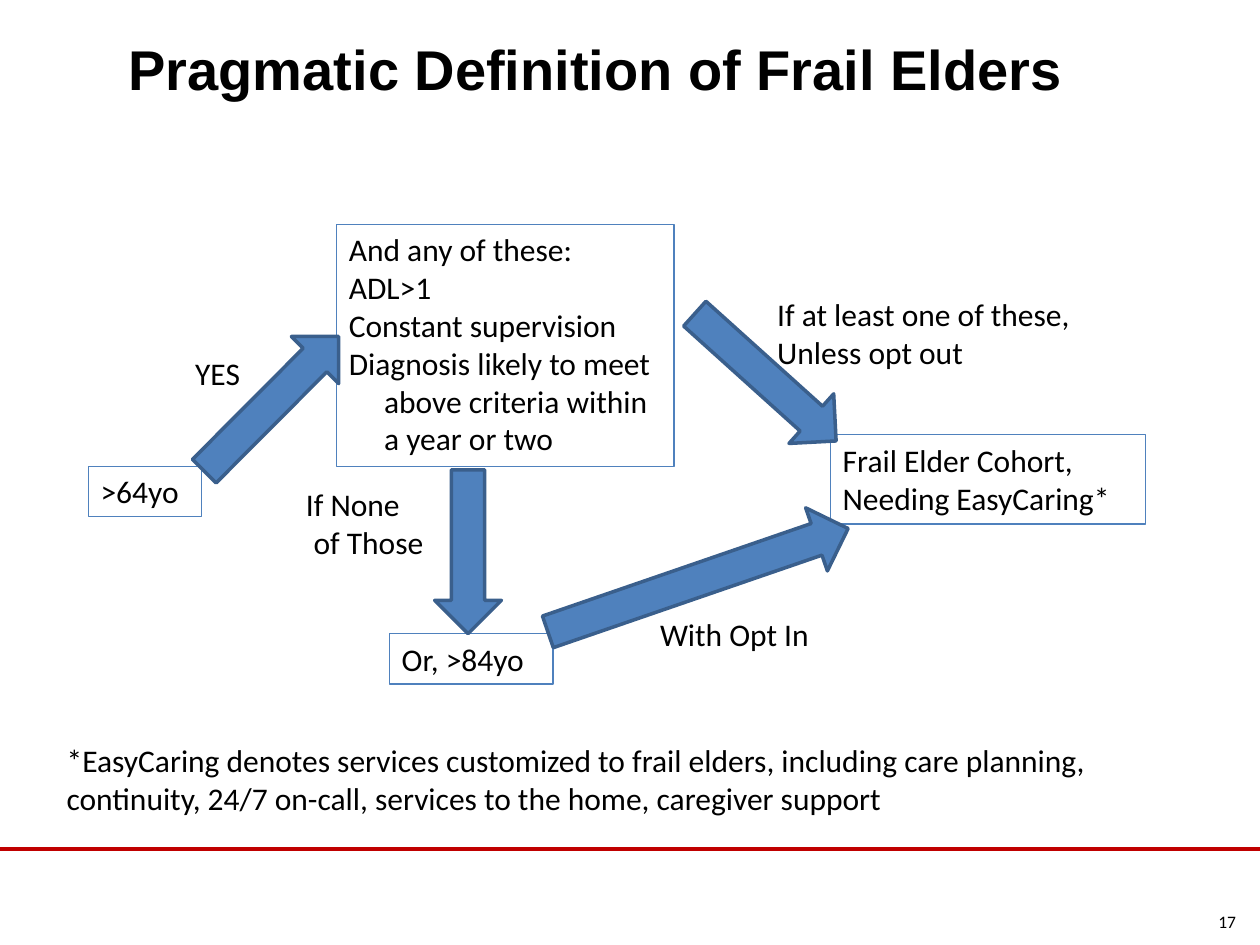
"""Build the slide that defines frail elders with a flow of boxes and arrows."""
from lxml.etree import SubElement
from pptx import Presentation
from pptx.dml.color import RGBColor as Rgb
from pptx.enum.shapes import MSO_CONNECTOR as Link, MSO_SHAPE as Kind
from pptx.enum.text import MSO_ANCHOR as Anchor, PP_ALIGN as Align
from pptx.oxml.ns import qn
from pptx.util import Inches, Pt

HUE = {"ink": "000000", "blue": "4F81BD", "edge": "3A5F8C", "red": "C00000"}

TITLE = "Pragmatic Definition of Frail Elders"
PAGE = "17"
BOXES = [
    ((0.7, 3.7, 0.9, 0.4), [(">64yo", 0)]),
    ((2.67, 1.78, 2.68, 1.92), [
        ("And any of these:", 0),
        ("ADL>1", 0),
        ("Constant supervision", 0),
        ("Diagnosis likely to meet", 0),
        ("above criteria within", 0.28),
        ("a year or two", 0.28),
    ]),
    ((3.09, 5.03, 1.3, 0.4), [("Or, >84yo", 0)]),
    ((6.59, 3.45, 2.5, 0.71), [("Frail Elder Cohort,", 0), ("Needing EasyCaring*", 0)]),
]
ARROWS = [
    (Kind.RIGHT_ARROW, (1.4, 2.94, 1.51, 0.53), 314.9),
    (Kind.DOWN_ARROW, (3.45, 3.73, 0.53, 1.3), 0),
    (Kind.RIGHT_ARROW, (5.32, 2.73, 1.51, 0.53), 42),
    (Kind.RIGHT_ARROW, (4.28, 4.34, 2.52, 0.53), 341),
]
NOTES = [
    ((1.45, 2.76, 0.71, 0.4), [("YES", 0)]),
    ((6.07, 2.29, 2.75, 0.71), [("If at least one of these,", 0), ("Unless opt out", 0)]),
    ((2.33, 3.8, 1.25, 0.71), [("If None", 0), ("of Those", 0.06)]),
    ((5.14, 4.83, 1.46, 0.4), [("With Opt In", 0)]),
    ((0.43, 5.83, 8.59, 0.71), [
        ("*EasyCaring denotes services customized to frail elders, including care planning,", 0),
        ("continuity, 24/7 on-call, services to the home, caregiver support", 0),
    ]),
]


def color(name):
    return Rgb.from_string(HUE[name])


def place(spot):
    return [Inches(n) for n in spot]


def write(shape, lines, size=18, face="Calibri", bold=False, align=Align.LEFT,
          anchor=Anchor.TOP, pad=(0.1, 0.05)):
    frame = shape.text_frame
    frame.word_wrap = True
    frame.vertical_anchor = anchor
    frame.margin_left = frame.margin_right = Inches(pad[0])
    frame.margin_top = frame.margin_bottom = Inches(pad[1])
    frame.text = "\n".join(text for text, _ in lines)
    for para, (_, indent) in zip(frame.paragraphs, lines):
        para.alignment = align
        if indent:
            para._p.get_or_add_pPr().set("marL", str(Inches(indent)))
        font = para.font
        font.name, font.size, font.bold = face, Pt(size), bold
        font.color.rgb = color("ink")


def draw(slide, kind, spot, edge, width, fill=None):
    shape = slide.shapes.add_shape(kind, *place(spot))
    shape.shadow.inherit = False
    shape.line.color.rgb = color(edge)
    shape.line.width = Pt(width)
    if fill:
        shape.fill.solid()
        shape.fill.fore_color.rgb = color(fill)
    else:
        shape.fill.background()
    return shape


def label(slide, spot, lines, **style):
    write(slide.shapes.add_textbox(*place(spot)), lines, **style)


def main():
    deck = Presentation()
    deck.slide_width, deck.slide_height = Inches(10), Inches(7.5)
    slide = deck.slides.add_slide(deck.slide_layouts[6])

    rule = slide.shapes.add_connector(Link.STRAIGHT, *place((0, 6.74, 10, 6.74)))
    rule.line.color.rgb = color("red")
    rule.line.width = Pt(2)
    SubElement(rule._element.spPr, qn("a:effectLst"))

    label(slide, (9.08, 7.18, 0.73, 0.27), [(PAGE, 0)], size=10,
          align=Align.RIGHT, pad=(0, 0.05))
    label(slide, (1.02, 0.09, 7.98, 0.72), [(TITLE, 0)], size=32, face="Arial",
          bold=True, anchor=Anchor.BOTTOM, pad=(0, 0))
    for spot, lines in BOXES:
        write(draw(slide, Kind.RECTANGLE, spot, "blue", 0.75), lines)
    for kind, spot, turn in ARROWS:
        draw(slide, kind, spot, "edge", 2, "blue").rotation = turn
    for spot, lines in NOTES:
        label(slide, spot, lines)
    deck.save("out.pptx")


if __name__ == "__main__":
    main()
